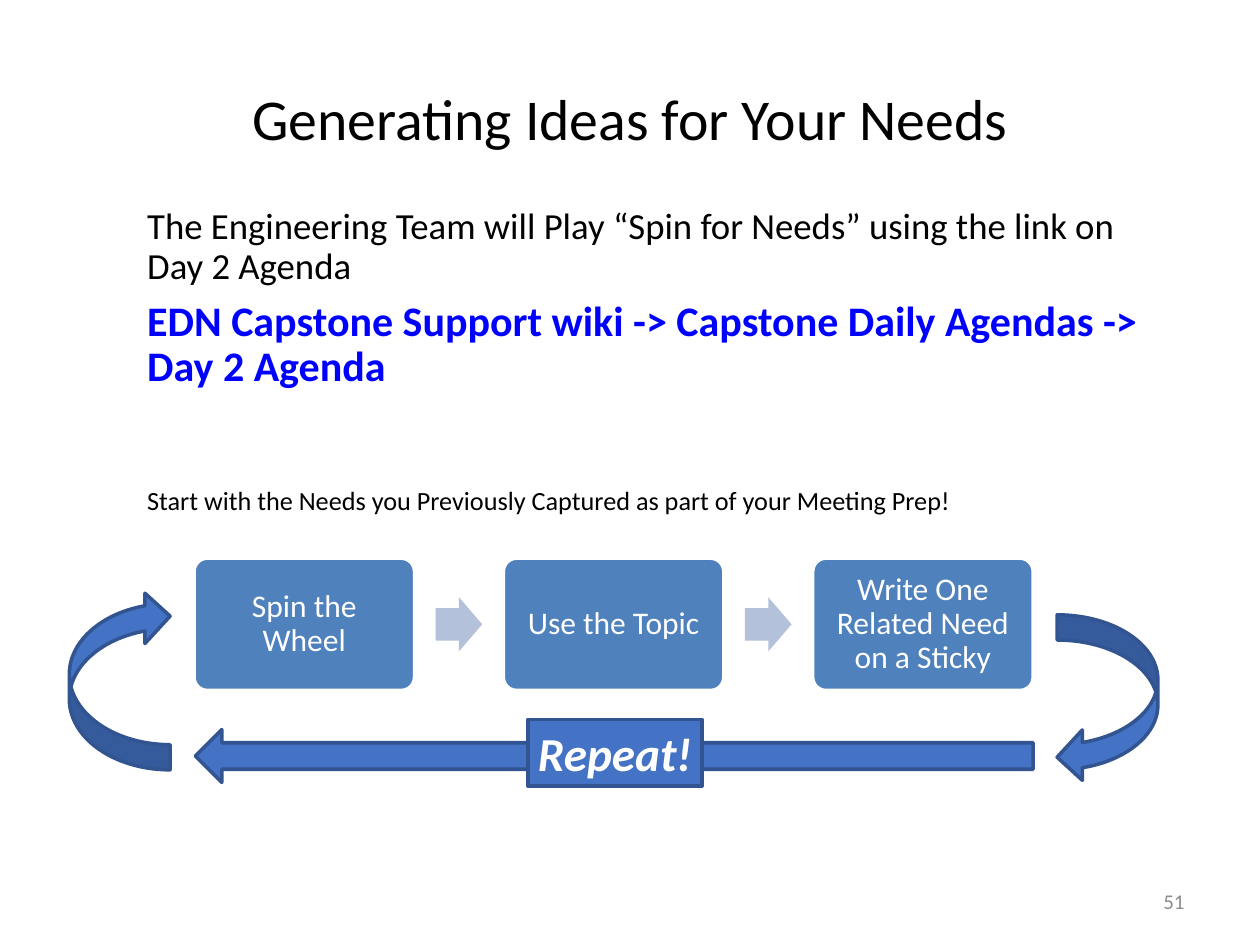
from pptx import Presentation
from pptx.dml.color import RGBColor
from pptx.enum.shapes import MSO_SHAPE
from pptx.enum.text import MSO_ANCHOR, PP_ALIGN
from pptx.util import Inches, Pt

LEFT, CENTER, RIGHT = PP_ALIGN.LEFT, PP_ALIGN.CENTER, PP_ALIGN.RIGHT
TOP, MIDDLE = MSO_ANCHOR.TOP, MSO_ANCHOR.MIDDLE
ROUNDED, RECTANGLE = MSO_SHAPE.ROUNDED_RECTANGLE, MSO_SHAPE.RECTANGLE
RIGHT_ARROW, CURVED_ARROW = MSO_SHAPE.RIGHT_ARROW, MSO_SHAPE.CURVED_LEFT_ARROW
COLORS = {
    "black": "000000", "white": "FFFFFF", "link": "0000FF", "number": "8C8C8C",
    "step": "4F81BD", "step_arrow": "B3C1DB", "loop": "4472C4", "loop_line": "325490",
}
STEPS = ["Spin the Wheel", "Use the Topic", "Write One Related Need on a Sticky"]


def color(name):
    return RGBColor.from_string(COLORS[name])


def write(frame, paragraphs, anchor=TOP, margins=(0.1, 0.05), wrap=True):
    """Fill a frame with (text, font format, paragraph format) entries."""
    side, edge = map(Inches, margins)
    settings = {"word_wrap": wrap, "vertical_anchor": anchor, "margin_left": side,
                "margin_right": side, "margin_top": edge, "margin_bottom": edge}
    for name, value in settings.items():
        setattr(frame, name, value)
    for index, (text, font, layout) in enumerate(paragraphs):
        para = frame.add_paragraph() if index else frame.paragraphs[0]
        for name, value in layout.items():
            setattr(para, name, value)
        span = para.add_run()
        span.text = text
        span.font.color.rgb = color(font["color"])
        for name, value in {"name": "Calibri", **font}.items():
            if name != "color":
                setattr(span.font, name, value)


def add_text(slide, box, paragraphs, anchor=TOP):
    frame = slide.shapes.add_textbox(*map(Inches, box)).text_frame
    write(frame, paragraphs, anchor)


def add_block(slide, kind, box, fill, line=None, adjust=(), rotation=0):
    block = slide.shapes.add_shape(kind, *map(Inches, box))
    block.shadow.inherit = False
    block.rotation = rotation
    block.fill.solid()
    block.fill.fore_color.rgb = color(fill)
    if line:
        block.line.color.rgb = color(line)
        block.line.width = Pt(2)
    else:
        block.line.fill.background()
    for index, value in enumerate(adjust):
        block.adjustments[index] = value
    return block


def add_title(slide, box):
    add_text(slide, box, [("Generating Ideas for Your Needs",
                           {"size": Pt(33), "color": "black"},
                           {"alignment": CENTER, "line_spacing": 0.9})], MIDDLE)


def add_instructions(slide, box):
    near = {"alignment": LEFT, "line_spacing": 0.9, "space_before": Pt(7.5)}
    far = {**near, "space_before": Pt(55.5)}
    add_text(slide, box, [
        ("The Engineering Team will Play “Spin for Needs” using the link on Day 2 Agenda",
         {"size": Pt(21), "color": "black"}, near),
        ("EDN Capstone Support wiki -> Capstone Daily Agendas -> Day 2 Agenda",
         {"size": Pt(24), "color": "link", "bold": True}, near),
        ("Start with the Needs you Previously Captured as part of your Meeting Prep!",
         {"size": Pt(15), "color": "black"}, far),
    ])


def add_process(slide, box):
    """Lay the steps out evenly, with an arrow in each gap."""
    left, top, width, height = box
    step_width, arrow_width, arrow_height = 1.75, 0.37, 0.43
    pitch = (width - step_width) / (len(STEPS) - 1)
    for index, label in enumerate(STEPS):
        x = left + index * pitch
        step = add_block(slide, ROUNDED, (x, top, step_width, height),
                         "step", "white", [0.1])
        write(step.text_frame, [(label, {"size": Pt(18), "color": "white"},
                                 {"alignment": CENTER, "line_spacing": 0.9})],
              MIDDLE, (0.1, 0.1))
        if index:
            gap = pitch - step_width
            arrow_box = (x - (gap + arrow_width) / 2, top + (height - arrow_height) / 2,
                         arrow_width, arrow_height)
            add_block(slide, RIGHT_ARROW, arrow_box, "step_arrow", adjust=[0.6, 0.5])


def add_loop(slide, box):
    """Draw the way back: down the right side, along the bottom, up the left side."""
    left, top, width, height = box
    curve_width = 0.8
    style = {"fill": "loop", "line": "loop_line"}
    add_block(slide, RIGHT_ARROW, (left + 1, top + 1.1, width - 1.99, 0.42),
              adjust=[0.5, 0.5], rotation=180, **style)
    curves = [((left + width - curve_width, top + 0.19, curve_width, 1.33), 0),
              ((left, top, curve_width, 1.42), 180)]
    for curve_box, rotation in curves:
        add_block(slide, CURVED_ARROW, curve_box, adjust=[0.25, 0.5, 0.25],
                  rotation=rotation, **style)
    label = add_block(slide, RECTANGLE, (left + 3.64, top + height - 0.53, 1.38, 0.53),
                      **style)
    write(label.text_frame, [("Repeat!", {"size": Pt(27), "color": "white", "bold": True,
                                          "italic": True}, {"alignment": CENTER})],
          MIDDLE, (0.07, 0.04), wrap=False)


def add_page_number(slide, box):
    add_text(slide, box, [("51", {"size": Pt(12), "color": "number"},
                           {"alignment": RIGHT})], MIDDLE)


def main():
    deck = Presentation()
    deck.slide_width, deck.slide_height = Inches(10), Inches(7.5)
    slide = deck.slides.add_slide(deck.slide_layouts[6])
    add_title(slide, (0.69, 0.42, 8.62, 1.09))
    add_process(slide, (1.54, 4.43, 6.66, 1.05))
    add_loop(slide, (0.55, 4.69, 8.64, 1.55))
    add_instructions(slide, (1.07, 1.6, 8.24, 2.7))
    add_page_number(slide, (7.17, 6.95, 2.33, 0.4))
    deck.save("out.pptx")


if __name__ == "__main__":
    main()
